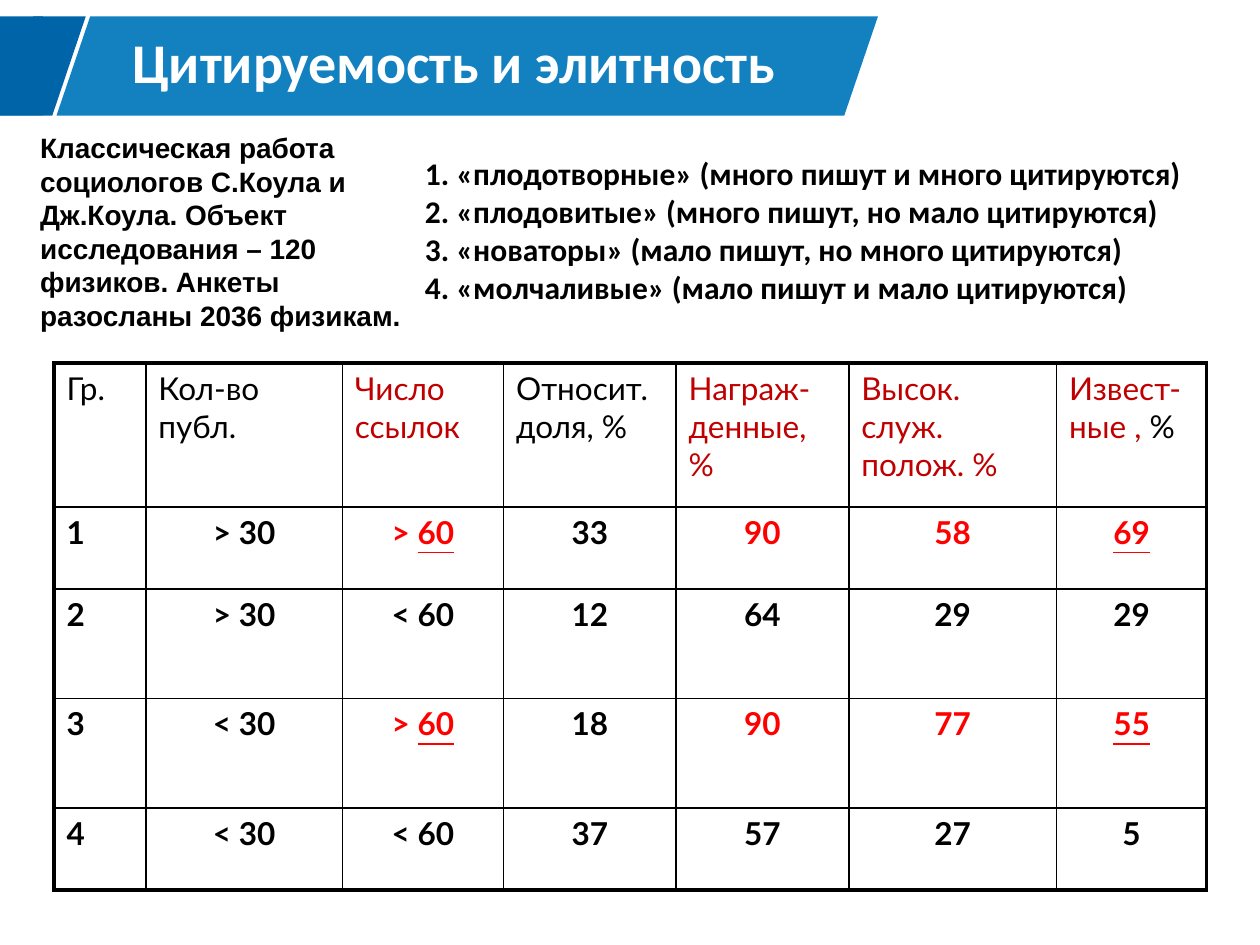
from dataclasses import dataclass

from lxml import etree
from pptx import Presentation
from pptx.dml.color import RGBColor
from pptx.enum.shapes import MSO_SHAPE
from pptx.enum.text import MSO_ANCHOR, MSO_AUTO_SIZE, PP_ALIGN
from pptx.oxml.ns import qn
from pptx.util import Cm, Pt

RECTANGLE, PARALLELOGRAM = MSO_SHAPE.RECTANGLE, MSO_SHAPE.PARALLELOGRAM
LEFT, CENTER, JUSTIFY = PP_ALIGN.LEFT, PP_ALIGN.CENTER, PP_ALIGN.JUSTIFY
TOP, MIDDLE = MSO_ANCHOR.TOP, MSO_ANCHOR.MIDDLE
NO_AUTOFIT = MSO_AUTO_SIZE.NONE


@dataclass(frozen=True)
class Theme:
    dark_blue: str = "0064A8"
    blue: str = "1381C0"
    white: str = "FFFFFF"
    black: str = "000000"
    header_red: str = "C00000"
    value_red: str = "FF0000"
    title_font: str = "Calibri"
    study_font: str = "Arial"
    table_font: str = "Lato"
    title_size: int = 32
    text_size: int = 18
    study_size: int = 16
    inner_line: float = 1
    outer_line: float = 2.25


THEME = Theme()

TITLE = "Цитируемость и элитность"
STUDY = ("Классическая работа социологов С.Коула и Дж.Коула. Объект исследования "
         "– 120 физиков. Анкеты разосланы 2036 физикам.")
GROUPS = [
    "1. «плодотворные» (много пишут и много цитируются)",
    "2. «плодовитые» (много пишут, но мало цитируются)",
    "3. «новаторы» (мало пишут, но много цитируются)",
    "4. «молчаливые» (мало пишут и мало цитируются)",
]
TABLE_ROWS = [
    ["Гр.", "Кол-во публ.", "Число ссылок", "Относит. доля, %",
     "Награж-денные, %", "Высок. служ. полож. %", "Извест-ные , %"],
    ["1", "> 30", "> 60", "33", "90", "58", "69"],
    ["2", "> 30", "< 60", "12", "64", "29", "29"],
    ["3", "< 30", "> 60", "18", "90", "77", "55"],
    ["4", "< 30", "< 60", "37", "57", "27", "5"],
]
COLUMN_WIDTHS = [1.85, 3.96, 3.25, 3.48, 3.48, 4.19, 3.02]
ROW_HEIGHTS = [2.9, 1.65, 2.21, 2.21, 1.65]
RED_COLUMNS = {2, 4, 5, 6}
UNDERLINED_COLUMNS = {2, 6}
HIGHLY_CITED_ROWS = {1, 3}


def style(paragraph, font, size, color, bold=True, align=LEFT):
    paragraph.alignment = align
    paragraph.space_before = Pt(0)
    paragraph.font.name = font
    paragraph.font.size = Pt(size)
    paragraph.font.bold = bold
    paragraph.font.color.rgb = RGBColor.from_string(color)


def place(shape, left, top, width, height):
    shape.left, shape.top = Cm(left), Cm(top)
    shape.width, shape.height = Cm(width), Cm(height)


def add_band(slide, kind, left, top, width, height, color, slant=None):
    band = slide.shapes.add_shape(kind, Cm(left), Cm(top), Cm(width), Cm(height))
    band.shadow.inherit = False
    band.fill.solid()
    band.fill.fore_color.rgb = RGBColor.from_string(color)
    band.line.fill.background()
    if slant is not None:
        band.adjustments[0] = slant


def build_header(slide, left, top, width, height):
    tab_width, title_offset = 1.73, 1.14
    add_band(slide, RECTANGLE, left, top, tab_width / 2, height, THEME.dark_blue)
    add_band(slide, PARALLELOGRAM, left, top, tab_width, height, THEME.dark_blue, 0.39)
    add_band(slide, PARALLELOGRAM, left + title_offset, top, width - title_offset,
             height, THEME.blue, 0.34)

    title = slide.shapes.title
    slide.shapes.element.append(title.element)  # bring in front of the bands
    place(title, left + 1.52, top - 0.1, 15.27, height)
    frame = title.text_frame
    frame.auto_size = NO_AUTOFIT
    frame.vertical_anchor = MIDDLE
    frame.text = TITLE
    style(frame.paragraphs[0], THEME.title_font, THEME.title_size, THEME.white,
          align=CENTER)


def build_study(slide, left, top, width, height):
    study = slide.shapes.add_textbox(Cm(left), Cm(top), Cm(width), Cm(height))
    study.text_frame.word_wrap = True
    study.text_frame.text = STUDY
    style(study.text_frame.paragraphs[0], THEME.study_font, THEME.study_size,
          THEME.black)


def build_groups(slide, left, top, width, height):
    groups = slide.placeholders[1]
    place(groups, left, top, width, height)
    frame = groups.text_frame
    frame.auto_size = NO_AUTOFIT
    frame.vertical_anchor = TOP
    frame.text = "\n".join(GROUPS)
    for paragraph in frame.paragraphs:
        properties = paragraph._p.get_or_add_pPr()
        properties.set("marL", "0")
        properties.set("indent", "0")
        etree.SubElement(properties, qn("a:buNone"))
        style(paragraph, THEME.title_font, THEME.text_size, THEME.black, align=JUSTIFY)


def set_borders(cell, row, column):
    """Draw thin lines inside the table and thick ones around it."""
    outer_sides = {
        "L": column == 0,
        "R": column == len(COLUMN_WIDTHS) - 1,
        "T": row == 0,
        "B": row == len(ROW_HEIGHTS) - 1,
    }
    properties = cell._tc.get_or_add_tcPr()
    for side, is_outer in outer_sides.items():
        width = Pt(THEME.outer_line if is_outer else THEME.inner_line)
        line = etree.SubElement(properties, qn(f"a:ln{side}"), w=str(width))
        fill = etree.SubElement(line, qn("a:solidFill"))
        etree.SubElement(fill, qn("a:srgbClr"), val=THEME.black)


def fill_cell(cell, text, row, column):
    is_header = row == 0
    is_red = column in RED_COLUMNS and (is_header or row in HIGHLY_CITED_ROWS)
    red = THEME.header_red if is_header else THEME.value_red
    paragraph = cell.text_frame.paragraphs[0]
    style(paragraph, THEME.table_font, THEME.text_size, red if is_red else THEME.black,
          bold=not is_header, align=LEFT if is_header or column == 0 else CENTER)

    # The last word carries the underline, or the black sign of the last heading.
    start, space, last_word = text.rpartition(" ")
    underlined = is_red and not is_header and column in UNDERLINED_COLUMNS
    black_sign = is_header and column == len(COLUMN_WIDTHS) - 1
    if not underlined and not black_sign:
        paragraph.add_run().text = text
        return
    if start:
        paragraph.add_run().text = start + space
    ending = paragraph.add_run()
    ending.text = last_word
    if underlined:
        ending.font.underline = True
    else:
        ending.font.color.rgb = RGBColor.from_string(THEME.black)


def build_table(slide, left, top):
    table = slide.shapes.add_table(
        len(ROW_HEIGHTS), len(COLUMN_WIDTHS), Cm(left), Cm(top),
        Cm(sum(COLUMN_WIDTHS)), Cm(sum(ROW_HEIGHTS))).table
    table.first_row = table.horz_banding = False
    for column, width in zip(table.columns, COLUMN_WIDTHS):
        column.width = Cm(width)
    for row, height in zip(table.rows, ROW_HEIGHTS):
        row.height = Cm(height)
    for row, texts in enumerate(TABLE_ROWS):
        for column, text in enumerate(texts):
            cell = table.cell(row, column)
            set_borders(cell, row, column)
            cell.fill.background()
            fill_cell(cell, text, row, column)


def main():
    presentation = Presentation()
    presentation.slide_width, presentation.slide_height = Cm(25.4), Cm(19.05)
    slide = presentation.slides.add_slide(presentation.slide_layouts[1])
    build_header(slide, 0, 0.33, 17.7, 2)
    build_table(slide, 1.09, 7.32)
    build_groups(slide, 8.31, 2.98, 16.48, 4.1)
    build_study(slide, 0.56, 2.51, 8, 4.37)
    presentation.save("out.pptx")


if __name__ == "__main__":
    main()
